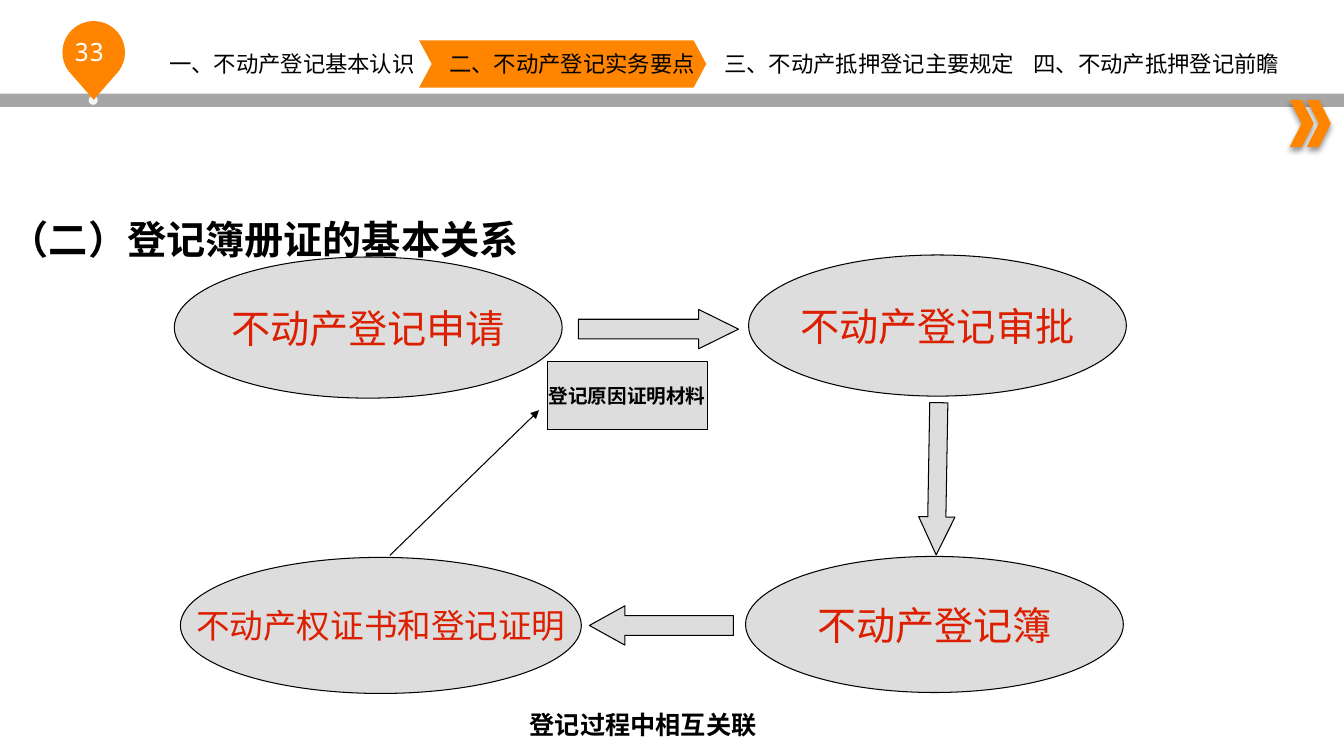
import math

from lxml import etree
from pptx import Presentation
from pptx.dml.color import RGBColor
from pptx.enum.shapes import MSO_CONNECTOR, MSO_SHAPE
from pptx.enum.text import MSO_ANCHOR, PP_ALIGN
from pptx.oxml.ns import qn
from pptx.util import Inches, Pt

ORANGE = RGBColor(0xFF, 0x85, 0x00)
GREY = RGBColor(0xA6, 0xA6, 0xA6)
PALE = RGBColor(0xDD, 0xDD, 0xDD)
DOT = RGBColor(0xF6, 0xF6, 0xF6)
RED = RGBColor(0xDC, 0x1F, 0x00)
BLACK = RGBColor(0, 0, 0)
WHITE = RGBColor(0xFF, 0xFF, 0xFF)

RECT, OVAL = MSO_SHAPE.RECTANGLE, MSO_SHAPE.OVAL
CHEVRON, ARROW = MSO_SHAPE.CHEVRON, MSO_SHAPE.RIGHT_ARROW
STRAIGHT = MSO_CONNECTOR.STRAIGHT
MIDDLE = MSO_ANCHOR.MIDDLE
LEFT, CENTER = PP_ALIGN.LEFT, PP_ALIGN.CENTER

WIDTH, HEIGHT = Inches(13.34), Inches(7.5)
COLUMNS, ROWS = 133.4, 75
LINE_WIDTH = Pt(0.75)


class Board:
    """Draws on one slide; every length is in grid columns and rows."""

    def __init__(self, slide):
        self.shapes = slide.shapes

    def x(self, columns):
        return round(WIDTH * columns / COLUMNS)

    def y(self, rows):
        return round(HEIGHT * rows / ROWS)

    def box(self, left, top, width, height):
        return self.x(left), self.y(top), self.x(width), self.y(height)

    def paint(self, sp, fill, outlined=False):
        sp.shadow.inherit = False
        sp.fill.solid()
        sp.fill.fore_color.rgb = fill
        if outlined:
            sp.line.color.rgb = BLACK
            sp.line.width = LINE_WIDTH
        else:
            sp.line.fill.background()

    def shape(self, kind, at, fill, outlined=False, adjust=()):
        sp = self.shapes.add_shape(kind, *self.box(*at))
        self.paint(sp, fill, outlined)
        for i, value in enumerate(adjust):
            sp.adjustments[i] = value
        return sp

    def set_text(self, sp, text, size, color, font="Arial", bold=False,
                 align=CENTER, wrap=False):
        tf = sp.text_frame
        tf.word_wrap = wrap
        tf.vertical_anchor = MIDDLE
        p = tf.paragraphs[0]
        p.text = text
        p.alignment = align
        p.font.name = font
        p.font.size = Pt(size)
        p.font.bold = bold
        p.font.color.rgb = color
        return tf

    def text(self, at, text, size, color=BLACK, **style):
        sp = self.shapes.add_textbox(*self.box(*at))
        return self.set_text(sp, text, size, color, wrap=True, **style)

    def node(self, kind, at, text, size, color=RED, bold=False):
        sp = self.shape(kind, at, PALE, outlined=True)
        self.set_text(sp, text, size, color, bold=bold)

    def block_arrow(self, at, head, rotation=0):
        sp = self.shape(ARROW, at, PALE, outlined=True, adjust=(0.5, head))
        sp.rotation = rotation

    def thin_arrow(self, start, end):
        sp = self.shapes.add_connector(
            STRAIGHT, self.x(start[0]), self.y(start[1]),
            self.x(end[0]), self.y(end[1]))
        sp.line.color.rgb = BLACK
        sp.line.width = LINE_WIDTH
        props = sp._element.spPr
        etree.SubElement(props.find(qn("a:ln")), qn("a:tailEnd"), type="triangle")
        etree.SubElement(props, qn("a:effectLst"))

    def pin(self, cx, cy, radius, tip):
        """A round marker that narrows to a point at row tip."""
        arc = [(self.x(cx + radius * math.cos(math.radians(a))),
                self.y(cy + radius * math.sin(math.radians(a))))
               for a in range(135, 406, 5)]
        builder = self.shapes.build_freeform(self.x(cx), self.y(tip))
        builder.add_line_segments(arc, close=True)
        self.paint(builder.convert_to_shape(), ORANGE)

    def drop_shadow(self, sp):
        effects = sp._element.spPr.find(qn("a:effectLst"))
        shadow = etree.SubElement(
            effects, qn("a:outerShdw"), blurRad=str(Pt(4)), dist=str(Pt(3)),
            dir="5400000", rotWithShape="0")
        color = etree.SubElement(shadow, qn("a:srgbClr"), val="000000")
        etree.SubElement(color, qn("a:alpha"), val="40000")


def draw_header(board):
    board.shape(RECT, (0, 9.3, COLUMNS, 1.3), GREY)
    for left in (128, 129.7):
        board.drop_shadow(board.shape(CHEVRON, (left, 9.9, 2.4, 4.7), ORANGE))
    board.shape(OVAL, (8.8, 9.5, 0.9, 0.9), DOT)
    board.pin(9.3, 5.2, 3.1, 9.9)
    board.text((4.5, 3.1, 8.7, 4), "33", 18, WHITE, font="Noto Sans Mono")

    board.shape(CHEVRON, (41.6, 4, 28.5, 4.7), ORANGE, adjust=(0.267,))
    sections = (
        (16.8, "一、不动产登记基本认识"),
        (44.6, "二、不动产登记实务要点"),
        (71.9, "三、不动产抵押登记主要规定"),
        (102.6, "四、不动产抵押登记前瞻"),
    )
    for left, label in sections:
        tf = board.text((left, 5, 30, 2.7), label, 16, font="Calibri", align=LEFT)
        tf.margin_left = tf.margin_right = tf.margin_top = tf.margin_bottom = 0


def draw_cycle(board):
    board.text((0, 20.9, 93.4, 5.5), "（二）登记簿册证的基本关系", 28,
               font="Noto Sans CJK SC", bold=True, align=LEFT)
    board.node(OVAL, (17.3, 25.5, 38.5, 14), "不动产登记申请", 28)
    board.node(OVAL, (74.3, 25.3, 37.5, 14), "不动产登记审批", 28)
    board.node(OVAL, (74, 55.2, 37.5, 13.5), "不动产登记簿", 28)
    board.node(OVAL, (17.9, 55.3, 39.8, 13.5), "不动产权证书和登记证明", 24)
    board.node(RECT, (54.3, 35.9, 15.9, 6.7), "登记原因证明材料", 14, BLACK, bold=True)

    board.block_arrow((57.4, 30.7, 15.9, 3.9), 1.014)
    board.block_arrow((85.5, 45.7, 15.1, 3.6), 1.047, rotation=91)
    board.block_arrow((58.5, 60.1, 14.3, 3.9), 0.904, rotation=180)
    board.thin_arrow((38.7, 55.1), (53.5, 40.7))
    board.text((51.6, 69.9, 41.8, 4), "登记过程中相互关联", 18, bold=True, align=LEFT)


def main():
    prs = Presentation()
    prs.slide_width, prs.slide_height = WIDTH, HEIGHT
    board = Board(prs.slides.add_slide(prs.slide_layouts[6]))
    draw_header(board)
    draw_cycle(board)
    prs.save("out.pptx")


if __name__ == "__main__":
    main()
